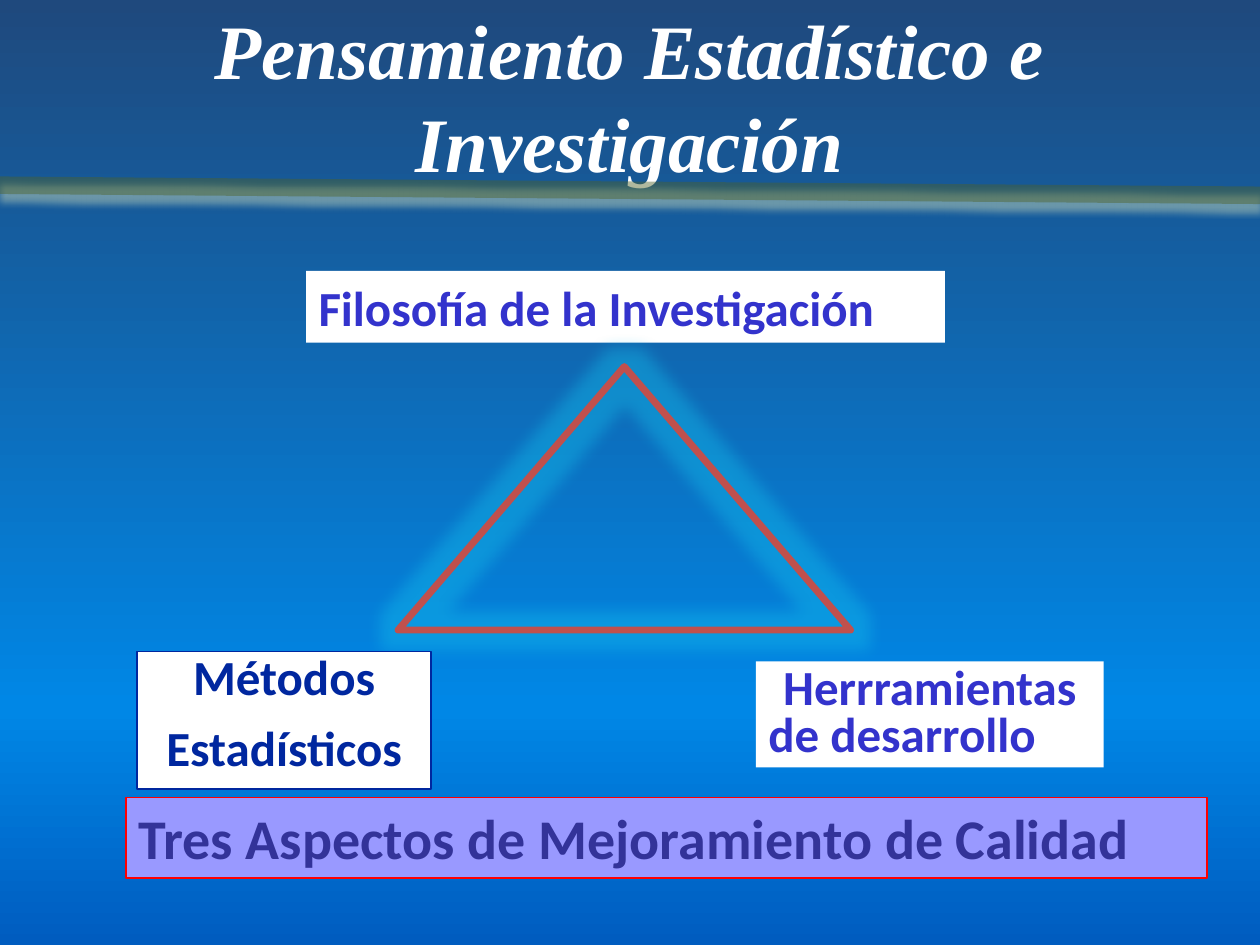
from lxml.etree import SubElement
from pptx import Presentation
from pptx.dml.color import RGBColor
from pptx.enum.shapes import MSO_CONNECTOR, MSO_SHAPE
from pptx.enum.text import MSO_ANCHOR, MSO_AUTO_SIZE, PP_ALIGN
from pptx.oxml.ns import qn
from pptx.util import Inches, Pt

WHITE = RGBColor(0xFF, 0xFF, 0xFF)
BLUE = RGBColor(0x33, 0x33, 0xCC)
NAVY = RGBColor(0x00, 0x27, 0x9F)
INDIGO = RGBColor(0x33, 0x33, 0x99)
LILAC = RGBColor(0x99, 0x99, 0xFF)
RED = RGBColor(0xFF, 0x00, 0x00)
BRICK = RGBColor(0xC0, 0x50, 0x4D)
AQUA = RGBColor(0x14, 0xBE, 0xEA)
OLIVE = RGBColor(0x4F, 0x62, 0x28)
PALE_OLIVE = RGBColor(0xD7, 0xE4, 0xBD)
BACKGROUND = ((0, RGBColor(0x1F, 0x49, 0x7D)),
              (75, RGBColor(0x00, 0x87, 0xE6)),
              (100, RGBColor(0x00, 0x5C, 0xBF)))

# The slide is a grid of 100 columns by 75 rows
W, H = Inches(10), Inches(7.5)
COL, ROW = W / 100, H / 75


def place(box):
    x, y, w, h = box
    return int(x * COL), int(y * ROW), int(w * COL), int(h * ROW)


def add_color(parent, color, alpha=100):
    clr = SubElement(parent, qn("a:srgbClr"), val=str(color))
    if alpha < 100:
        SubElement(clr, qn("a:alpha"), val=str(alpha * 1000))


def add_effect(shape, tag, color, alpha=100, **attrs):
    """Add one effect to the shape's effect list."""
    sp_pr = shape._element.spPr
    effects = sp_pr.find(qn("a:effectLst"))
    if effects is None:
        effects = SubElement(sp_pr, qn("a:effectLst"))
    effect = SubElement(effects, qn(tag), {k: str(v) for k, v in attrs.items()})
    add_color(effect, color, alpha)


def paint_background(s):
    fill = s.background.fill
    fill.gradient()
    fill.gradient_angle = 270
    stops = s._element.find(".//" + qn("a:gsLst"))
    for gs in list(stops):
        stops.remove(gs)
    for pos, color in BACKGROUND:
        add_color(SubElement(stops, qn("a:gs"), pos=str(pos * 1000)), color)


def add_title(s, box, text):
    title = s.shapes.title
    title.left, title.top, title.width, title.height = place(box)
    tf = title.text_frame
    tf.word_wrap = True
    tf.vertical_anchor = MSO_ANCHOR.MIDDLE
    p = tf.paragraphs[0]
    p.alignment = PP_ALIGN.CENTER
    r = p.add_run()
    r.text = text
    f = r.font
    f.name, f.size, f.bold, f.italic = "Times New Roman", Pt(44), True, True
    f.color.rgb = WHITE


def add_divider(s, box):
    x, y, w, h = place(box)
    line = s.shapes.add_connector(MSO_CONNECTOR.STRAIGHT, x, y, x + w, y + h)
    line.line.width = Pt(10)
    line.line.color.rgb = OLIVE
    clr = line._element.spPr.find(".//" + qn("a:srgbClr"))
    SubElement(clr, qn("a:alpha"), val="44000")
    add_effect(line, "a:outerShdw", PALE_OLIVE, blurRad=Pt(4), dist=Pt(4),
               dir=90 * 60000, algn="t", rotWithShape=0)


def add_triangle(s, box):
    sp = s.shapes.add_shape(MSO_SHAPE.ISOSCELES_TRIANGLE, *place(box))
    sp.shadow.inherit = False
    sp.fill.background()
    sp.line.color.rgb = BRICK
    sp.line.width = Pt(4)
    add_effect(sp, "a:glow", AQUA, 40, rad=Pt(18))


def add_label(s, box, lines, color, size=28, fill=WHITE, border=None, spacing=None):
    """lines holds (text, alignment, space before in percent)."""
    sp = s.shapes.add_shape(MSO_SHAPE.RECTANGLE, *place(box))
    sp.shadow.inherit = False
    sp.fill.solid()
    sp.fill.fore_color.rgb = fill
    if border is None:
        sp.line.fill.background()
    else:
        sp.line.color.rgb = border
        sp.line.width = Pt(1)
    tf = sp.text_frame
    tf.word_wrap = True
    tf.auto_size = MSO_AUTO_SIZE.SHAPE_TO_FIT_TEXT
    tf.vertical_anchor = MSO_ANCHOR.TOP
    for i, (text, align, before) in enumerate(lines):
        p = tf.add_paragraph() if i else tf.paragraphs[0]
        p.alignment = align
        if spacing:
            p.line_spacing = spacing
        space = SubElement(p._p.get_or_add_pPr(), qn("a:spcBef"))
        SubElement(space, qn("a:spcPct"), val=str(before * 1000))
        r = p.add_run()
        r.text = text
        r.font.name, r.font.size, r.font.bold = "Calibri", Pt(size), True
        r.font.color.rgb = color


def add_aspects(s):
    """Triangle with one label at each corner."""
    left, center = PP_ALIGN.LEFT, PP_ALIGN.CENTER
    add_label(s, (24.3, 21.5, 50.7, 5.7),
              [("Filosofía de la Investigación", left, 50)], BLUE)
    add_triangle(s, (31.6, 29.1, 35.9, 20.9))
    add_label(s, (10.9, 51.7, 23.3, 10.9),
              [("Métodos", center, 50), ("Estadísticos", center, 50)],
              NAVY, border=NAVY, spacing=0.8)
    add_label(s, (60, 52.5, 27.6, 8.4),
              [("Herrramientas", center, 50), ("de desarrollo", left, 0)],
              BLUE, spacing=0.8)


def main():
    prs = Presentation()
    prs.slide_width, prs.slide_height = W, H
    s = prs.slides.add_slide(prs.slide_layouts[5])
    paint_background(s)
    add_title(s, (5, 1.3, 90, 12.5), "Pensamiento Estadístico e Investigación")
    add_divider(s, (0, 14.7, 100, 0.8))
    add_aspects(s)
    # Closing banner
    add_label(s, (10, 63.3, 85.8, 6.4),
              [("Tres Aspectos de Mejoramiento de Calidad", PP_ALIGN.LEFT, 50)],
              INDIGO, size=32, fill=LILAC, border=RED)
    prs.save("out.pptx")


if __name__ == "__main__":
    main()
